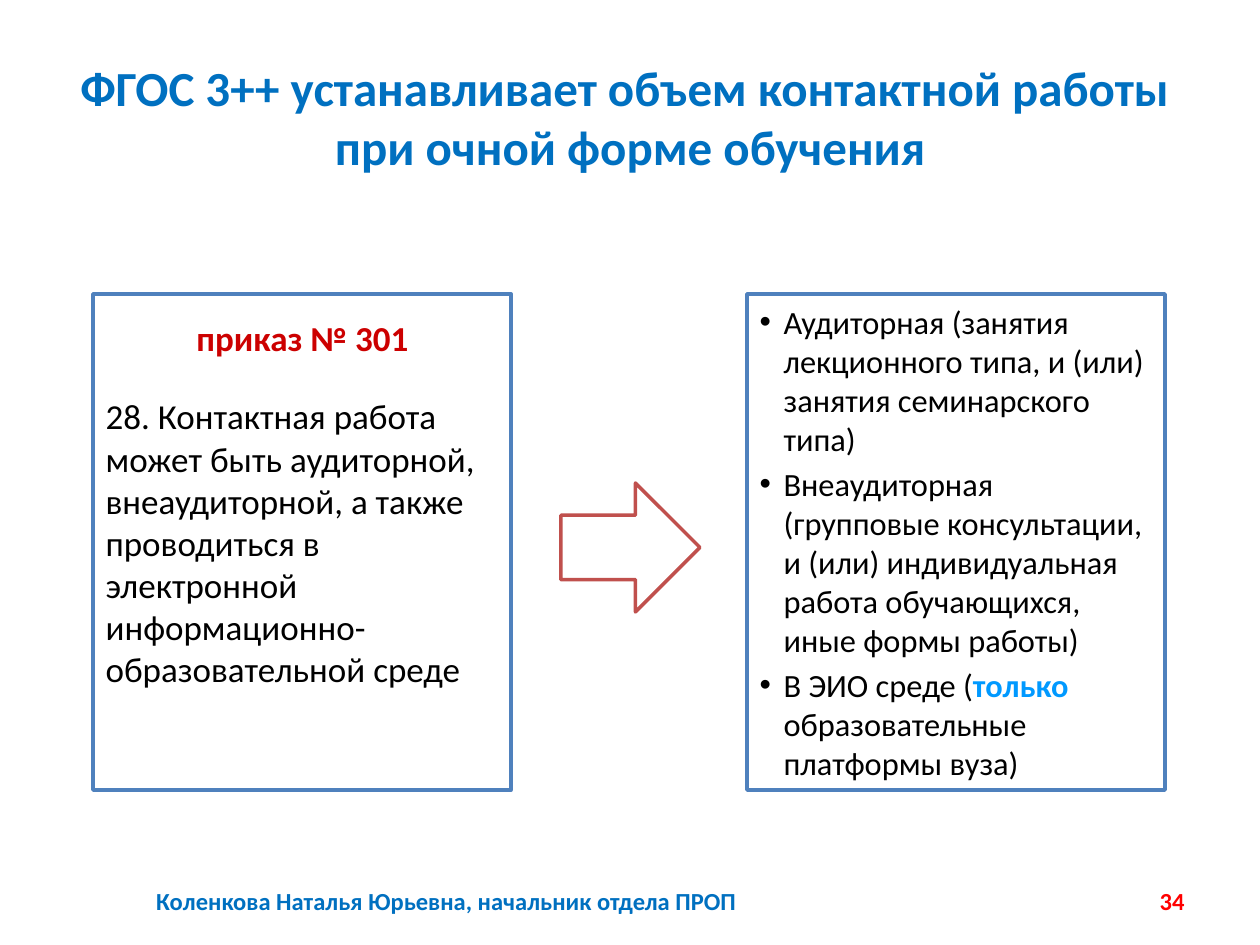
from lxml import etree
from pptx import Presentation
from pptx import util as u
from pptx.dml.color import RGBColor
from pptx.enum import shapes, text
from pptx.oxml.ns import qn

PX = 914400 / 126
COLORS = {"white": "FFFFFF", "black": "000000", "blue": "0070C0", "sky": "0099FF",
          "red": "FF0000", "crimson": "CC0000", "frame": "4F81BD", "arrow": "C0504D"}
LEFT, CENTER, RIGHT = text.PP_ALIGN.LEFT, text.PP_ALIGN.CENTER, text.PP_ALIGN.RIGHT
TOP, MIDDLE = text.MSO_ANCHOR.TOP, text.MSO_ANCHOR.MIDDLE


def px(n):
    return u.Emu(round(n * PX))


def rgb(name):
    return RGBColor.from_string(COLORS[name])


class SlideBuilder:
    font = "Calibri"
    line_width = u.Pt(2)
    indent = 24

    def __init__(self, slide):
        self.slide = slide

    def place(self, sp, box):
        sp.left, sp.top, sp.width, sp.height = map(px, box)

    def outline(self, sp, color):
        sp.fill.solid()
        sp.fill.fore_color.rgb = rgb("white")
        sp.line.color.rgb = rgb(color)
        sp.line.width = self.line_width

    def bullet(self, p, char):
        pPr = p._p.get_or_add_pPr()
        pPr.set("marL", str(px(self.indent) if char else 0))
        pPr.set("indent", str(px(-self.indent) if char else 0))
        if char:
            etree.SubElement(pPr, qn("a:buFont")).set("typeface", "Arial")
            etree.SubElement(pPr, qn("a:buChar")).set("char", char)
        else:
            etree.SubElement(pPr, qn("a:buNone"))

    def add_text(self, sp, paragraphs, size, align=LEFT, anchor=MIDDLE, char=None):
        """Each paragraph is a list of (text, color, bold) runs; None breaks the line."""
        tf = sp.text_frame
        tf.word_wrap = True
        tf.auto_size = text.MSO_AUTO_SIZE.NONE
        tf.vertical_anchor = anchor
        for i, runs in enumerate(paragraphs):
            p = tf.add_paragraph() if i else tf.paragraphs[0]
            self.bullet(p, char)
            p.alignment = align
            p.space_before = u.Pt(size * 0.2 if i else 0)
            for run in runs:
                if run is None:
                    p.add_line_break()
                    continue
                r = p.add_run()
                r.text, color, r.font.bold = run
                r.font.name = self.font
                r.font.size = u.Pt(size)
                r.font.color.rgb = rgb(color)

    def title(self, box, runs, size):
        sp = self.slide.shapes.title
        self.place(sp, box)
        self.add_text(sp, [runs], size, CENTER)

    def panel(self, idx, box, paragraphs, size, char=None):
        sp = self.slide.placeholders[idx]
        self.place(sp, box)
        self.outline(sp, "frame")
        self.add_text(sp, paragraphs, size, char=char)

    def label(self, box, run, size, align=LEFT, anchor=MIDDLE):
        sp = self.slide.shapes.add_textbox(*map(px, box))
        self.add_text(sp, [[run]], size, align, anchor)

    def arrow(self, box):
        sp = self.slide.shapes.add_shape(shapes.MSO_SHAPE.RIGHT_ARROW, *map(px, box))
        sp.shadow.inherit = False
        self.outline(sp, "arrow")


def main():
    prs = Presentation()
    prs.slide_width, prs.slide_height = px(1260), px(945)
    s = SlideBuilder(prs.slides.add_slide(prs.slide_layouts[3]))

    # Title
    s.title((63, 38, 1134, 157),
            [("ФГОС 3++ устанавливает объем контактной работы ", "blue", True), None,
             ("при очной форме обучения", "blue", True)], 28)

    # Order on the left, kinds of contact work on the right
    top, width, height = 294, 418, 496
    s.panel(1, (93, top, width, height),
            [[("28. Контактная работа может быть аудиторной, внеаудиторной, а также "
               "проводиться в электронной информационно-образовательной среде",
               "black", False)]], 20)
    s.panel(2, (747, top, width, height),
            [[("Аудиторная (занятия лекционного типа, и (или) занятия семинарского типа)",
               "black", False)],
             [("Внеаудиторная (групповые консультации, и (или) индивидуальная работа "
               "обучающихся, иные формы работы)", "black", False)],
             [("В ЭИО среде (", "black", False), ("только", "sky", True),
              (" образовательные платформы вуза)", "black", False)]], 18.5, "•")
    s.arrow((561, 483, 139, 129))
    s.label((184, 310, 268, 73), ("приказ № 301", "crimson", True), 20, anchor=TOP)

    # Footer
    s.label((64, 876, 765, 50),
            ("Коленкова Наталья Юрьевна, начальник отдела ПРОП", "blue", True), 14, CENTER)
    s.label((903, 876, 294, 50), ("34", "red", True), 14, RIGHT)

    prs.save("out.pptx")


if __name__ == "__main__":
    main()
